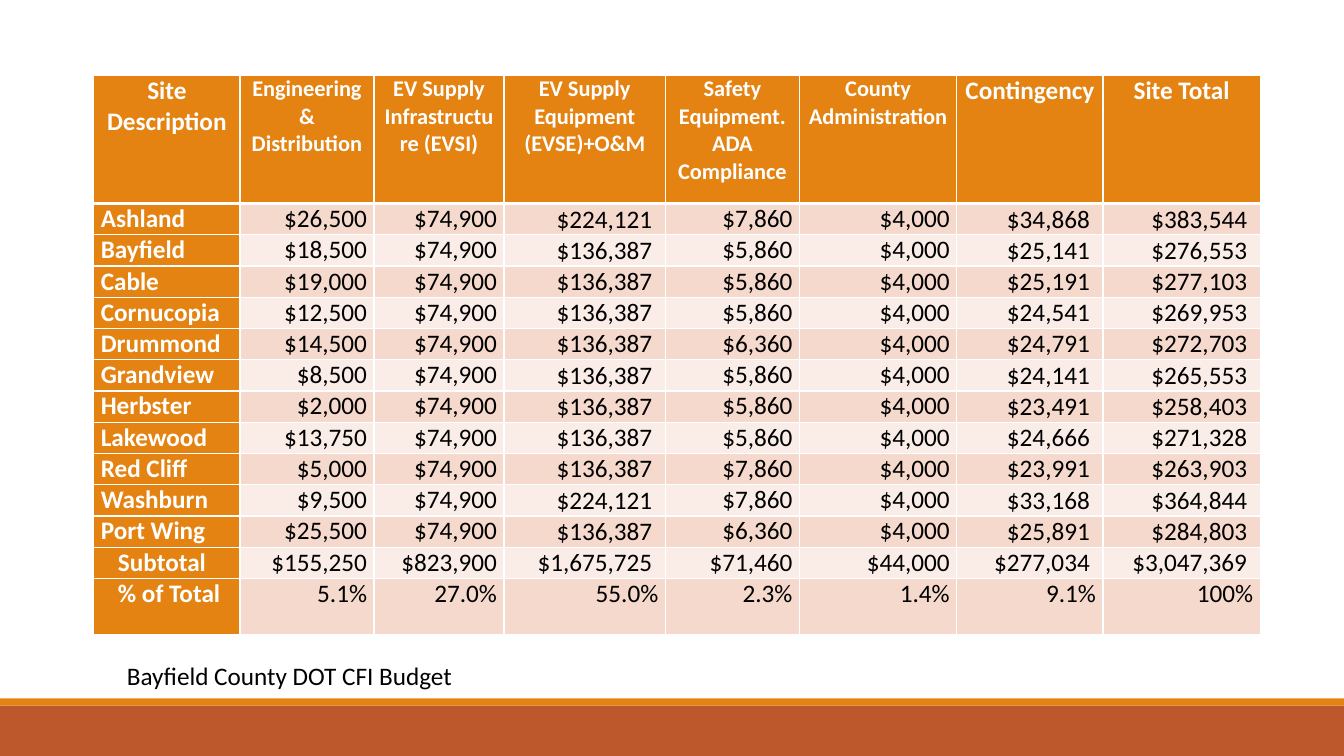
from lxml.etree import SubElement
from pptx import Presentation
from pptx.dml.color import RGBColor
from pptx.enum.shapes import MSO_SHAPE as Shape
from pptx.enum.text import MSO_ANCHOR as Anchor, PP_ALIGN as Align
from pptx.oxml.ns import qn
from pptx.util import Inches, Pt

CAPTION = "Bayfield County DOT CFI Budget"
HEADERS = [
    ("Site Description", 18),
    ("Engineering & Distribution", 16),
    ("EV Supply Infrastructure (EVSI)", 16),
    ("EV Supply Equipment (EVSE)+O&M", 16),
    ("Safety Equipment. ADA Compliance", 16),
    ("County Administration", 16),
    ("Contingency", 18),
    ("Site Total", 18),
]
SITES = [
    ("Ashland", 26500, 74900, 224121, 7860, 4000, 34868, 383544),
    ("Bayfield", 18500, 74900, 136387, 5860, 4000, 25141, 276553),
    ("Cable", 19000, 74900, 136387, 5860, 4000, 25191, 277103),
    ("Cornucopia", 12500, 74900, 136387, 5860, 4000, 24541, 269953),
    ("Drummond", 14500, 74900, 136387, 6360, 4000, 24791, 272703),
    ("Grandview", 8500, 74900, 136387, 5860, 4000, 24141, 265553),
    ("Herbster", 2000, 74900, 136387, 5860, 4000, 23491, 258403),
    ("Lakewood", 13750, 74900, 136387, 5860, 4000, 24666, 271328),
    ("Red Cliff", 5000, 74900, 136387, 7860, 4000, 23991, 263903),
    ("Washburn", 9500, 74900, 224121, 7860, 4000, 33168, 364844),
    ("Port Wing", 25500, 74900, 136387, 6360, 4000, 25891, 284803),
]
SUBTOTAL = ("Subtotal", 155250, 823900, 1675725, 71460, 44000, 277034, 3047369)
SHARES = ("% of Total", "5.1%", "27.0%", "55.0%", "2.3%", "1.4%", "9.1%", "100%")
BODY = SITES + [SUBTOTAL, SHARES]

FONT = "Calibri"
WHITE = RGBColor(0xFF, 0xFF, 0xFF)
BLACK = RGBColor(0, 0, 0)
ORANGE = RGBColor(0xE4, 0x83, 0x12)
RUST = RGBColor(0xBD, 0x58, 0x2C)
BANDS = (RGBColor(0xF5, 0xD9, 0xCC), RGBColor(0xFA, 0xED, 0xE7))

SLIDE_WIDTH, SLIDE_HEIGHT = 13.33, 7.5
FOOTER_TOP, STRIPE_HEIGHT = 7, 0.07
TABLE_LEFT, TABLE_TOP = 0.93, 0.75
COLUMN_WIDTHS = [1.45, 1.33, 1.29, 1.6, 1.33, 1.56, 1.45, 1.56]
ROW_HEIGHTS = [1.27] + [0.31] * (len(BODY) - 1) + [0.56]
CELL_MARGIN, AMOUNT_INDENT, TOTAL_INDENT = 0.07, 0.06, 0.17
INDENTED_COLUMNS = (3, 6, 7)


def write(frame, text, size=18, color=BLACK, bold=False, align=Align.LEFT):
    para = frame.paragraphs[0]
    para.alignment = align
    span = para.add_run()
    span.text = text
    span.font.name = FONT
    span.font.size = Pt(size)
    span.font.bold = bold
    span.font.color.rgb = color


def add_band(slide, top, height, color):
    band = slide.shapes.add_shape(
        Shape.RECTANGLE, 0, Inches(top), Inches(SLIDE_WIDTH), Inches(height))
    band.shadow.inherit = False
    band.fill.solid()
    band.fill.fore_color.rgb = color
    band.line.fill.background()


def set_borders(cell, **widths):
    """Draw white borders; widths maps the sides L, R, T, B to points."""
    properties = cell._tc.get_or_add_tcPr()
    for side, width in widths.items():
        line = SubElement(properties, qn(f"a:ln{side}"), w=str(Pt(width)))
        fill = SubElement(line, qn("a:solidFill"))
        SubElement(fill, qn("a:srgbClr"), val=str(WHITE))


def fill_cell(cell, row, column):
    left = right = CELL_MARGIN
    if row == 0:
        text, size = HEADERS[column]
        style = dict(size=size, color=WHITE, bold=True, align=Align.CENTER)
        color = ORANGE
    elif column == 0:
        text = BODY[row - 1][0]
        style = dict(color=WHITE, bold=True)
        color = ORANGE
        if BODY[row - 1] in (SUBTOTAL, SHARES):
            left += TOTAL_INDENT
    else:
        value = BODY[row - 1][column]
        is_amount = isinstance(value, int)
        text = f"${value:,}" if is_amount else value
        style = dict(align=Align.RIGHT)
        color = BANDS[(row - 1) % 2]
        if is_amount and column in INDENTED_COLUMNS:
            right += AMOUNT_INDENT
            cell.vertical_anchor = Anchor.BOTTOM
    cell.margin_left, cell.margin_right = Inches(left), Inches(right)
    cell.margin_top = cell.margin_bottom = 0
    set_borders(cell, L=1, R=1, T=3 if row == 1 else 1, B=3 if row == 0 else 1)
    cell.fill.solid()
    cell.fill.fore_color.rgb = color
    write(cell.text_frame, text, **style)


def add_budget(slide):
    frame = slide.shapes.add_table(
        len(ROW_HEIGHTS), len(COLUMN_WIDTHS), Inches(TABLE_LEFT), Inches(TABLE_TOP),
        Inches(sum(COLUMN_WIDTHS)), Inches(sum(ROW_HEIGHTS)))
    table = frame.table
    for column, width in zip(table.columns, COLUMN_WIDTHS):
        column.width = Inches(width)
    for row, height in enumerate(ROW_HEIGHTS):
        table.rows[row].height = Inches(height)
        for column in range(len(COLUMN_WIDTHS)):
            fill_cell(table.cell(row, column), row, column)


def main():
    deck = Presentation()
    deck.slide_width, deck.slide_height = Inches(SLIDE_WIDTH), Inches(SLIDE_HEIGHT)
    page = deck.slides.add_slide(deck.slide_layouts[6])
    add_band(page, FOOTER_TOP, SLIDE_HEIGHT - FOOTER_TOP, RUST)
    add_band(page, FOOTER_TOP - STRIPE_HEIGHT, STRIPE_HEIGHT, ORANGE)
    box = page.shapes.add_textbox(Inches(1.16), Inches(6.5), Inches(4.81), Inches(0.4))
    box.text_frame.word_wrap = True
    write(box.text_frame, CAPTION)
    add_budget(page)
    deck.save("out.pptx")


if __name__ == "__main__":
    main()
